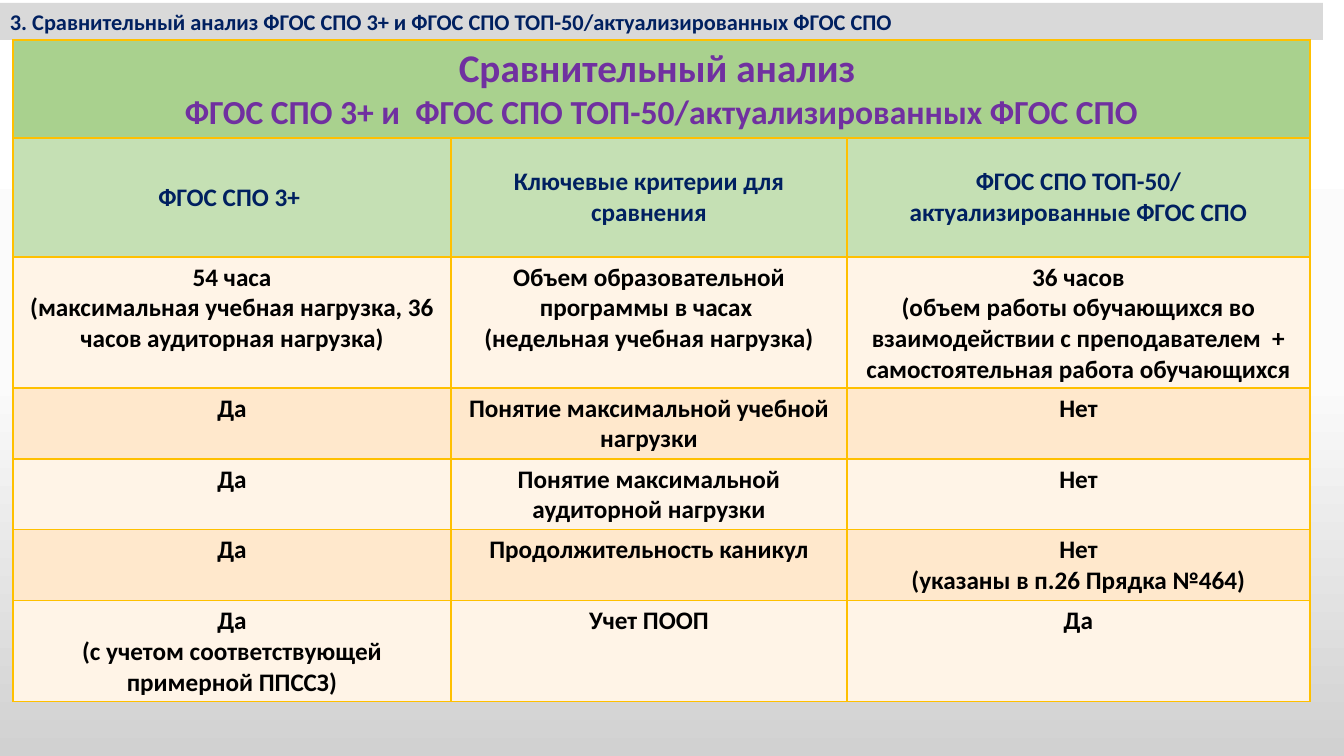
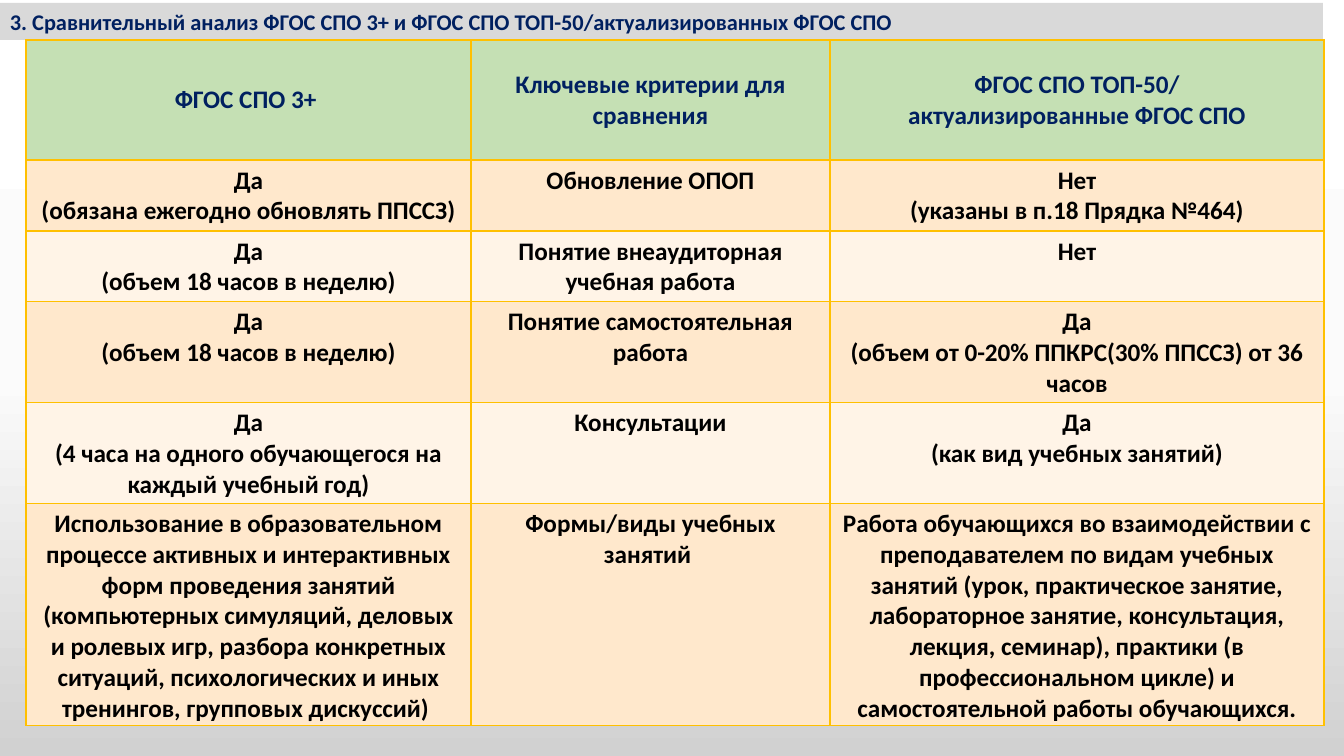
from copy import deepcopy
from dataclasses import dataclass

from lxml import etree
from pptx import Presentation
from pptx.dml.color import RGBColor
from pptx.enum.shapes import MSO_SHAPE
from pptx.enum.text import MSO_ANCHOR, MSO_AUTO_SIZE, PP_ALIGN
from pptx.oxml.ns import qn
from pptx.util import Pt

RECT = MSO_SHAPE.RECTANGLE
TOP, MIDDLE = MSO_ANCHOR.TOP, MSO_ANCHOR.MIDDLE
LEFT, CENTER = PP_ALIGN.LEFT, PP_ALIGN.CENTER
GROW = MSO_AUTO_SIZE.SHAPE_TO_FIT_TEXT

SLIDE_W, SLIDE_H = 1344, 756
SCALE = 12192000 / SLIDE_W


@dataclass(frozen=True)
class Theme:
    font: str = "Calibri"
    band: str = "D9D9D9"
    navy: str = "002060"
    purple: str = "7030A0"
    black: str = "000000"
    border: str = "FFC000"
    title_fill: str = "A9D18E"
    head_fill: str = "C5E0B4"
    row_fills: tuple = ("FFF4E7", "FFE8CC")
    background: tuple = ("FFFFFF", "FBFBFB", "D1D1D1")
    band_size: int = 16
    title_sizes: tuple = (28, 24)
    cell_size: int = 18
    border_width: int = 1


THEME = Theme()

BAND_TEXT = "3. Сравнительный анализ ФГОС СПО 3+ и ФГОС СПО ТОП-50/актуализированных ФГОС СПО"
BAND_BOX = (0, 3, 1323, 37)
TABLE_TOP = 40
TABLE_TITLE = "Сравнительный анализ \nФГОС СПО 3+ и  ФГОС СПО ТОП-50/актуализированных ФГОС СПО"
HEADINGS = (
    "ФГОС СПО 3+ ",
    "Ключевые критерии для сравнения",
    "ФГОС СПО ТОП-50/\nактуализированные ФГОС СПО",
)

SLIDES = [
    {
        "left": 13,
        "columns": (438, 396, 463),
        "heights": (98, 119, 131, 71, 70, 71, 101),
        "title": TABLE_TITLE,
        "rows": [
            ("54 часа\n(максимальная учебная нагрузка, 36 часов аудиторная нагрузка)",
             "Объем образовательной программы в часах \n(недельная учебная нагрузка)",
             "36 часов\n(объем работы обучающихся во взаимодействии с преподавателем  + "
             "самостоятельная работа обучающихся"),
            ("Да", "Понятие максимальной учебной нагрузки", "Нет"),
            ("Да", "Понятие максимальной аудиторной нагрузки", "Нет"),
            ("Да", "Продолжительность каникул", "Нет\n(указаны в п.26 Прядка №464)"),
            ("Да\n(с учетом соответствующей примерной ППССЗ)", "Учет ПООП", "Да"),
        ],
    },
    {
        "left": 26,
        "columns": (445, 359, 494),
        "heights": (120, 71, 70, 101, 101, 221),
        "title": None,
        "rows": [
            ("Да\n(обязана ежегодно обновлять ППССЗ)", "Обновление ОПОП",
             "Нет\n(указаны в п.18 Прядка №464)"),
            ("Да\n(объем 18 часов в неделю)", "Понятие внеаудиторная учебная работа", "Нет"),
            ("Да\n(объем 18 часов в неделю)", "Понятие самостоятельная работа",
             "Да\n(объем от 0-20% ППКРС(30% ППССЗ) от 36 часов"),
            ("Да\n(4 часа на одного обучающегося на каждый учебный год)", "Консультации",
             "Да\n(как вид учебных занятий)"),
            ("Использование в образовательном процессе активных и интерактивных форм "
             "проведения занятий (компьютерных симуляций, деловых и ролевых игр, разбора "
             "конкретных ситуаций, психологических и иных тренингов, групповых дискуссий) ",
             "Формы/виды учебных занятий ",
             "Работа обучающихся во взаимодействии с преподавателем по видам учебных занятий "
             "(урок, практическое занятие, лабораторное занятие, консультация, лекция, "
             "семинар), практики (в профессиональном цикле) и самостоятельной работы "
             "обучающихся."),
        ],
    },
]


def px(value):
    return round(value * SCALE)


def set_fill(fill, color):
    fill.solid()
    fill.fore_color.rgb = RGBColor.from_string(color)


def set_background(master):
    """Give the master a three-stop gradient running from top to bottom."""
    fill = master.background.fill
    fill.gradient()
    fill.gradient_angle = 270
    stop_list = next(master.element.iter(qn("a:gsLst")))
    stop_list.insert(1, deepcopy(stop_list[0]))
    for i, (stop, color) in enumerate(zip(fill.gradient_stops, THEME.background)):
        stop.position = i / 2
        stop.color.rgb = RGBColor.from_string(color)


def write(tf, text, sizes, color, align):
    """Write one paragraph per line; sizes holds one size, or one per line."""
    lines = text.split("\n")
    if len(sizes) == 1:
        sizes = sizes * len(lines)
    for i, (line, size) in enumerate(zip(lines, sizes)):
        p = tf.add_paragraph() if i else tf.paragraphs[0]
        p.alignment = align
        r = p.add_run()
        r.text = line
        r.font.name = THEME.font
        r.font.size = Pt(size)
        r.font.bold = True
        r.font.color.rgb = RGBColor.from_string(color)


def add_band(slide):
    sp = slide.shapes.add_shape(RECT, *map(px, BAND_BOX))
    sp.shadow.inherit = False
    sp.line.fill.background()
    set_fill(sp.fill, THEME.band)
    tf = sp.text_frame
    tf.word_wrap = True
    tf.auto_size = GROW
    tf.vertical_anchor = TOP
    write(tf, BAND_TEXT, (THEME.band_size,), THEME.navy, LEFT)


def set_borders(cell):
    props = cell._tc.get_or_add_tcPr()
    for side in ("a:lnL", "a:lnR", "a:lnT", "a:lnB"):
        line = etree.SubElement(props, qn(side), w=str(Pt(THEME.border_width)))
        solid = etree.SubElement(line, qn("a:solidFill"))
        etree.SubElement(solid, qn("a:srgbClr"), val=THEME.border)


def fill_cell(cell, text, fill, color, anchor, sizes=(THEME.cell_size,)):
    set_fill(cell.fill, fill)
    cell.vertical_anchor = anchor
    write(cell.text_frame, text, sizes, color, CENTER)


def add_comparison(slide, data, first_number):
    """Add the table; first_number continues the row banding across slides."""
    widths, heights = data["columns"], data["heights"]
    frame = slide.shapes.add_table(
        len(heights), len(widths), px(data["left"]), px(TABLE_TOP),
        px(sum(widths)), px(sum(heights)))
    table = frame.table
    table.first_row = table.horz_banding = False
    for column, width in zip(table.columns, widths):
        column.width = px(width)
    for row, height in zip(table.rows, heights):
        row.height = px(height)
    for cell in table.iter_cells():
        set_borders(cell)

    head = 0
    if data["title"]:
        title = table.cell(0, 0)
        title.merge(table.cell(0, len(widths) - 1))
        fill_cell(title, data["title"], THEME.title_fill, THEME.purple, MIDDLE,
                  THEME.title_sizes)
        head = 1
    for c, text in enumerate(HEADINGS):
        fill_cell(table.cell(head, c), text, THEME.head_fill, THEME.navy, MIDDLE)
    for i, texts in enumerate(data["rows"]):
        fill = THEME.row_fills[(first_number + i) % 2]
        for c, text in enumerate(texts):
            fill_cell(table.cell(head + 1 + i, c), text, fill, THEME.black, TOP)


def main():
    prs = Presentation()
    prs.slide_width, prs.slide_height = px(SLIDE_W), px(SLIDE_H)
    set_background(prs.slide_master)
    row_number = 0
    for data in SLIDES:
        slide = prs.slides.add_slide(prs.slide_layouts[6])
        add_band(slide)
        add_comparison(slide, data, row_number)
        row_number += len(data["rows"])
    prs.save("out.pptx")


if __name__ == "__main__":
    main()
